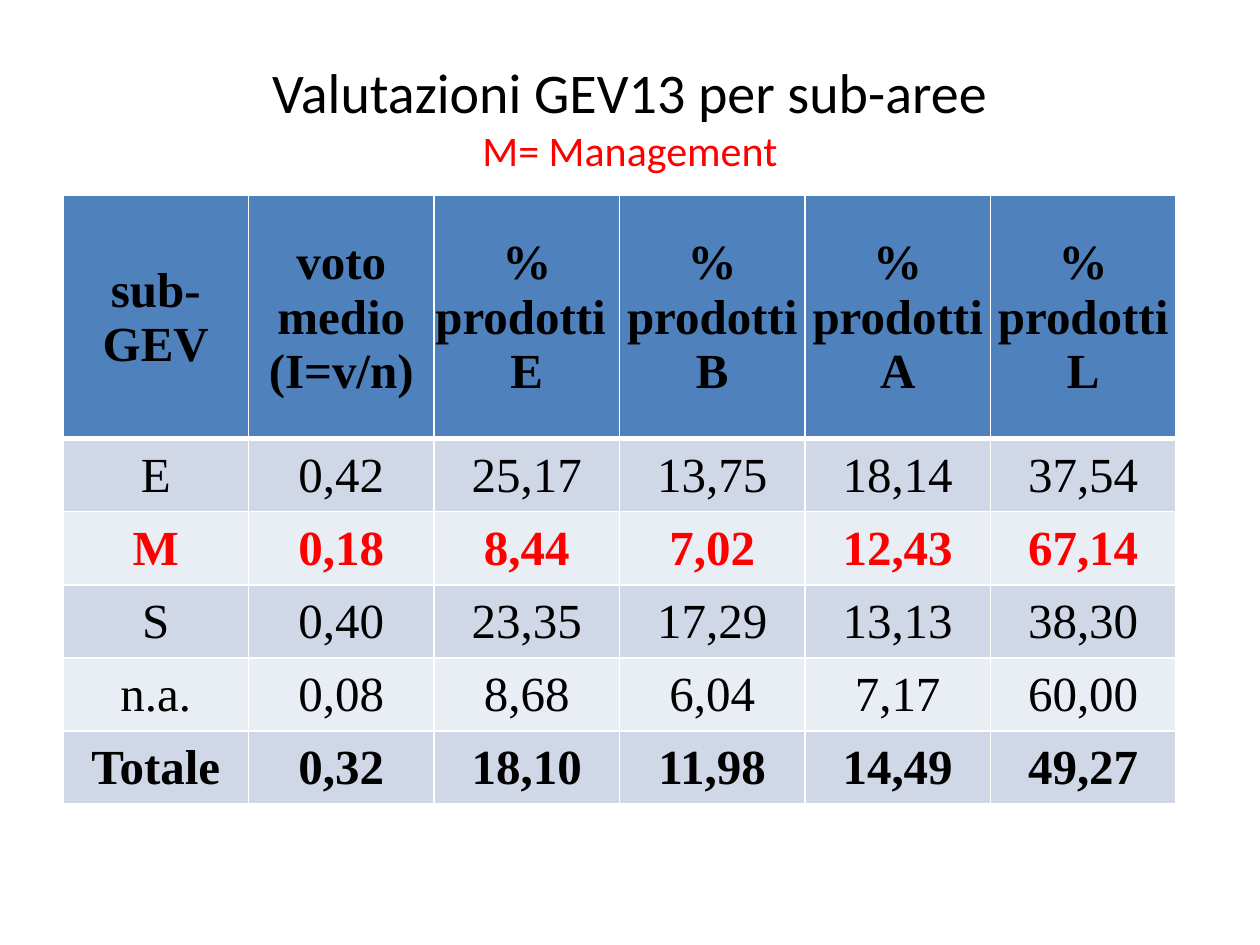
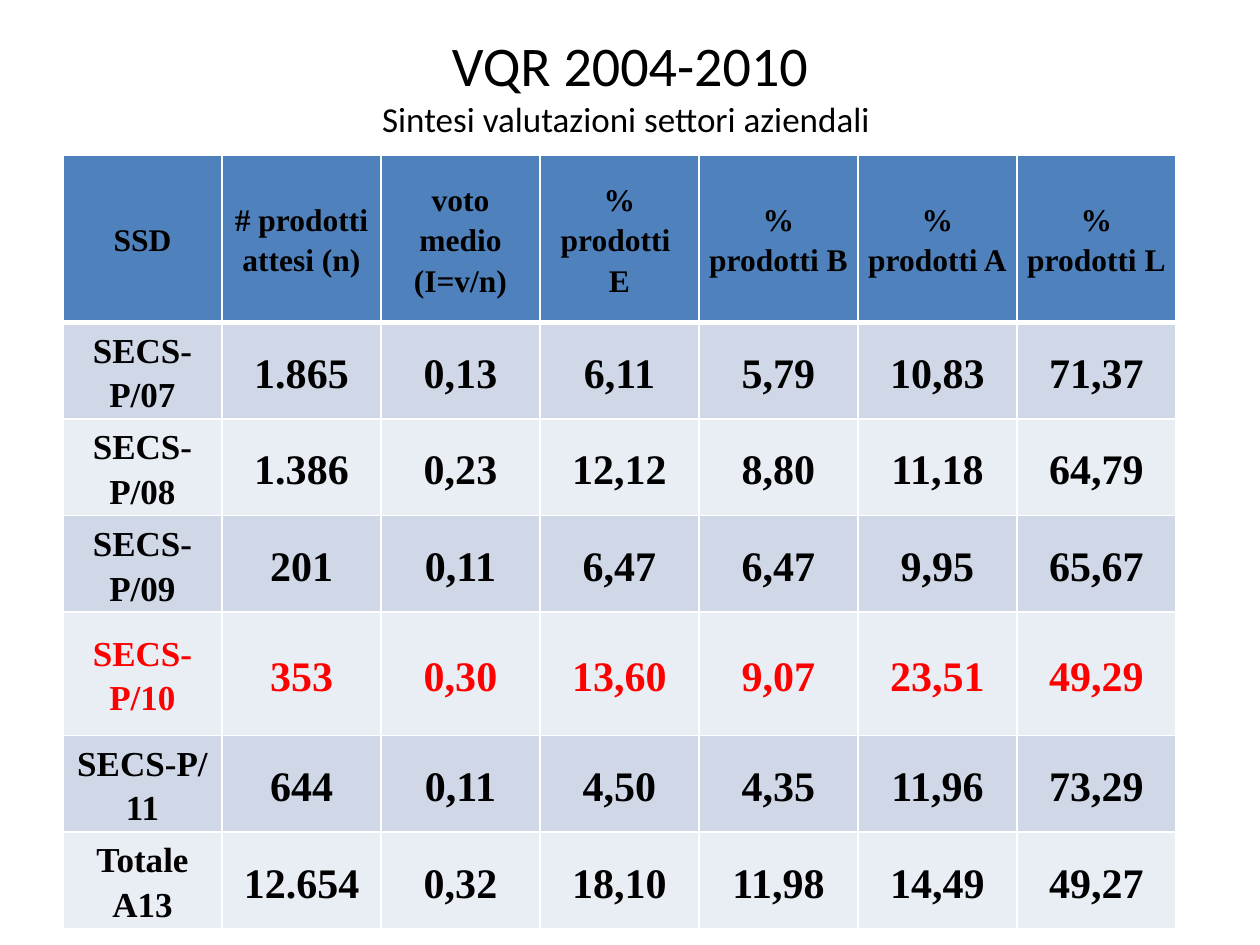
from dataclasses import dataclass

import pptx
import pptx.dml.color
import pptx.enum.text
import pptx.oxml
import pptx.oxml.ns
import pptx.util

Pt = pptx.util.Pt
HUES = {
    "black": "000000",
    "white": "FFFFFF",
    "red": "FF0000",
    "head": "4F81BD",
    "odd": "D0D8E8",
    "even": "E9EDF4",
}
SANS = "Calibri"
SERIF = "Times New Roman"
LEFT = 36
WIDTH = 636


@dataclass(frozen=True)
class Style:
    size: float
    font: str = SERIF
    hue: str = "black"
    bold: bool = False


@dataclass(frozen=True)
class Title:
    top: float
    main: str
    sub: str
    small: Style


@dataclass(frozen=True)
class Grid:
    top: float
    tall: float
    rows: list[str]
    highs: list[float]
    sizes: tuple[float, float, float]
    red: int
    bold: set[int]
    side: float
    cap: float
    space: float


HEADS = "voto medio (I=v/n)|% prodotti  E|% prodotti B|% prodotti A|% prodotti L"
TOTAL = "0,32|18,10|11,98|14,49|49,27"

PAGES = [
    (
        Title(21.6, "Valutazioni GEV13 per sub-aree", "M= Management", Style(24, SANS, "red")),
        Grid(
            top=111.6,
            tall=348,
            rows=[
                f"sub-GEV|{HEADS}",
                "E|0,42|25,17|13,75|18,14|37,54",
                "M|0,18|8,44|7,02|12,43|67,14",
                "S|0,40|23,35|17,29|13,13|38,30",
                "n.a.|0,08|8,68|6,04|7,17|60,00",
                f"Totale|{TOTAL}",
            ],
            highs=[139] + [41.8] * 5,
            sizes=(28, 28, 28),
            red=2,
            bold={0, 2, 5},
            side=0.7,
            cap=0.7,
            space=1.0,
        ),
    ),
    (
        Title(3.6, "VQR 2004-2010", "Sintesi valutazioni settori aziendali ", Style(20, SANS)),
        Grid(
            top=88.6,
            tall=442.8,
            rows=[
                f"SSD|# prodotti attesi (n)|{HEADS}",
                "SECS-P/07|1.865|0,13|6,11|5,79|10,83|71,37",
                "SECS-P/08|1.386|0,23|12,12|8,80|11,18|64,79",
                "SECS-P/09|201|0,11|6,47|6,47|9,95|65,67",
                "SECS-P/10|353|0,30|13,60|9,07|23,51|49,29",
                "SECS-P/11|644|0,11|4,50|4,35|11,96|73,29",
                f"Totale A13|12.654|{TOTAL}",
            ],
            highs=[95.5] + [37.4] * 3 + [70.4] + [37.4] * 2,
            sizes=(18, 20, 24),
            red=4,
            bold=set(range(7)),
            side=3.6,
            cap=0,
            space=1.15,
        ),
    ),
]


def tint(name: str) -> pptx.dml.color.RGBColor:
    return pptx.dml.color.RGBColor.from_string(HUES[name])


def add_run(para, text: str, style: Style) -> None:
    run = para.add_run()
    run.text = text
    run.font.size = Pt(style.size)
    run.font.name = style.font
    run.font.bold = style.bold
    run.font.color.rgb = tint(style.hue)


def add_title(slide, title: Title) -> None:
    box = slide.shapes.add_textbox(Pt(LEFT), Pt(title.top), Pt(648), Pt(90))
    frame = box.text_frame
    frame.word_wrap = True
    frame.vertical_anchor = pptx.enum.text.MSO_ANCHOR.MIDDLE
    para = frame.paragraphs[0]
    para.alignment = pptx.enum.text.PP_ALIGN.CENTER
    add_run(para, title.main, Style(32, SANS))
    para.add_line_break()
    add_run(para, title.sub, title.small)


def add_edge(cell, side: str, width: float) -> None:
    space = pptx.oxml.ns.nsdecls("a")
    cell._tc.get_or_add_tcPr().append(pptx.oxml.parse_xml(
        f'<a:ln{side} {space} w="{Pt(width)}"><a:solidFill>'
        f'<a:srgbClr val="{HUES["white"]}"/></a:solidFill></a:ln{side}>'
    ))


def fill_cell(cell, text: str, row: int, col: int, grid: Grid) -> None:
    edges = {"L": 1, "R": 1, "T": 3 if row == 1 else 1, "B": 3 if row == 0 else 1}
    for side, width in edges.items():
        add_edge(cell, side, width)
    cell.fill.solid()
    cell.fill.fore_color.rgb = tint("head" if row == 0 else "odd" if row % 2 else "even")
    cell.margin_left = cell.margin_right = Pt(grid.side)
    cell.margin_top, cell.margin_bottom = Pt(grid.cap), Pt(0)
    cell.vertical_anchor = pptx.enum.text.MSO_ANCHOR.MIDDLE
    para = cell.text_frame.paragraphs[0]
    para.alignment = pptx.enum.text.PP_ALIGN.CENTER
    para.line_spacing = grid.space
    head, first, rest = grid.sizes
    size = head if row == 0 else first if col == 0 else rest
    hue = "red" if row == grid.red else "black"
    add_run(para, text, Style(size, SERIF, hue, row in grid.bold))


def add_grid(slide, grid: Grid) -> None:
    cells = [line.split("|") for line in grid.rows]
    count = len(cells[0])
    shape = slide.shapes.add_table(
        len(cells), count, Pt(LEFT), Pt(grid.top), Pt(WIDTH), Pt(grid.tall)
    )
    table = shape.table
    for col in table.columns:
        col.width = Pt(WIDTH / count)
    for row, line in enumerate(cells):
        table.rows[row].height = Pt(grid.highs[row])
        for col, text in enumerate(line):
            fill_cell(table.cell(row, col), text, row, col, grid)
    shape.height = Pt(grid.tall)


def main() -> None:
    deck = pptx.Presentation()
    deck.slide_width, deck.slide_height = Pt(720), Pt(540)
    for title, grid in PAGES:
        slide = deck.slides.add_slide(deck.slide_layouts[6])
        add_title(slide, title)
        add_grid(slide, grid)
    deck.save("out.pptx")


if __name__ == "__main__":
    main()
